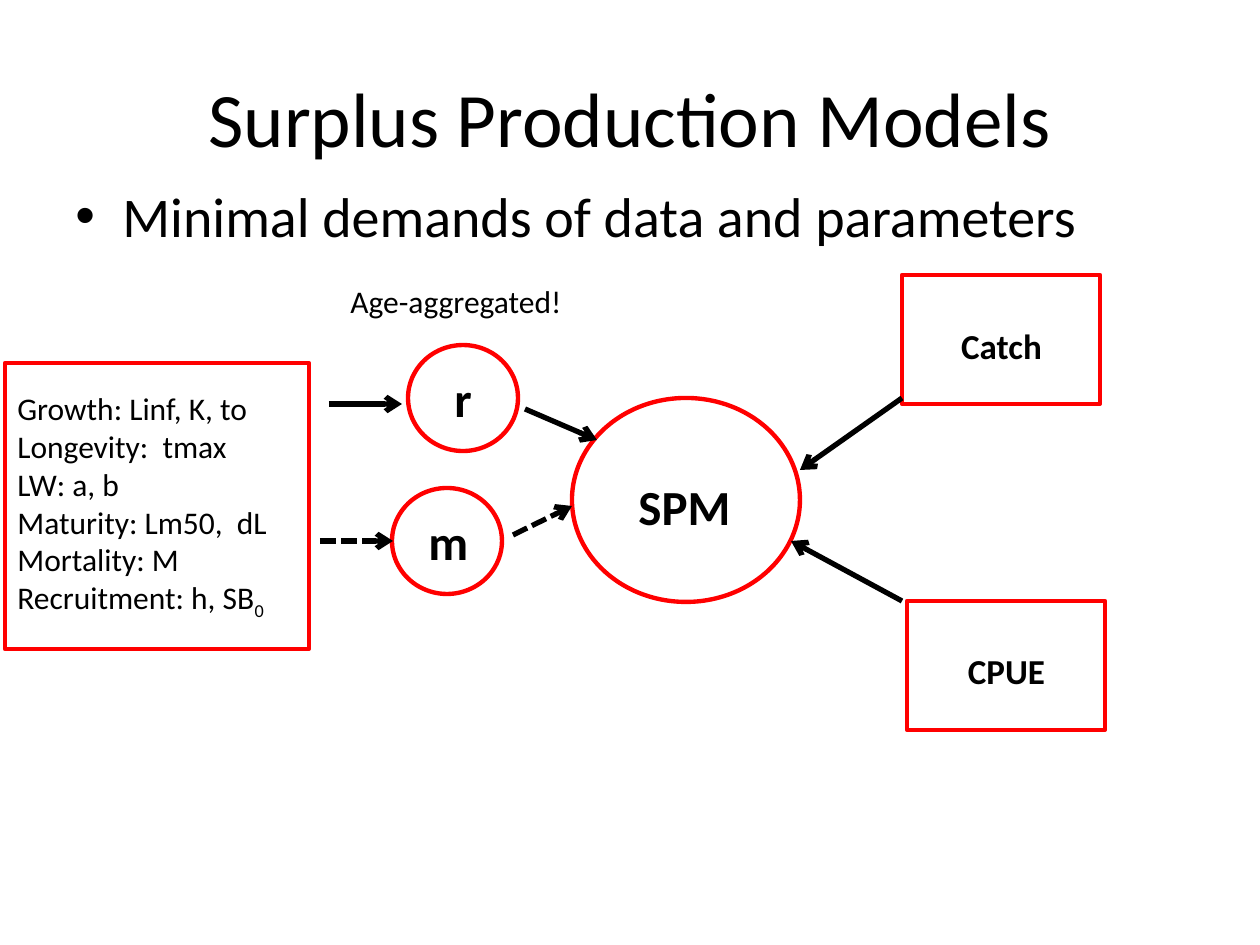
from pptx import Presentation
from pptx.dml.color import RGBColor
from pptx.enum.dml import MSO_LINE
from pptx.enum.shapes import MSO_CONNECTOR, MSO_SHAPE
from pptx.enum.text import MSO_ANCHOR, MSO_AUTO_SIZE, PP_ALIGN
from pptx.oxml.ns import qn
from pptx.util import Pt
from lxml.etree import SubElement

PX = 914400 / 126
BLACK = RGBColor(0, 0, 0)
RED = RGBColor(255, 0, 0)
FONT = "Calibri"
LEFT, CENTER = PP_ALIGN.LEFT, PP_ALIGN.CENTER
RECT, OVAL = MSO_SHAPE.RECTANGLE, MSO_SHAPE.OVAL

TITLE = "Surplus Production Models"
BULLET = "Minimal demands of data and parameters"
NOTE = "Age-aggregated!"
PARAMETERS = [
    "Growth: Linf, K, to",
    "Longevity:  tmax",
    "LW: a, b",
    "Maturity: Lm50,  dL",
    "Mortality: M",
    "Recruitment: h, SB",
]
SUBSCRIPT = "0"

OUTLINES = [
    (RECT, (902, 275, 198, 129)),
    (RECT, (907, 601, 198, 129)),
    (RECT, (5, 363, 304, 286)),
    (OVAL, (408, 345, 110, 106)),
    (OVAL, (572, 398, 228, 204)),
    (OVAL, (392, 488, 110, 106)),
]
LABELS = [
    ("r", (442, 362, 43, 72), 28, LEFT),
    ("SPM", (626, 470, 118, 72), 28, LEFT),
    ("m", (416, 505, 65, 72), 28, LEFT),
    ("Catch", (948, 318, 107, 55), 20, CENTER),
    ("CPUE", (955, 643, 103, 55), 20, CENTER),
]
ARROWS = [
    ((329, 404), (402, 404), False),
    ((525, 409), (597, 440), False),
    ((902, 601), (791, 541), False),
    ((902, 398), (800, 470), False),
    ((320, 541), (393, 541), True),
    ((513, 535), (572, 506), True),
]


def emu(*lengths):
    return [round(length * PX) for length in lengths]


def format_text(paragraph, size, bold=False):
    for run in paragraph.runs:
        run.font.name = FONT
        run.font.size = Pt(size)
        run.font.bold = bold
        run.font.color.rgb = BLACK


def add_text(slide, text, box, size, align=LEFT, bold=False, wrap=True,
             anchor=MSO_ANCHOR.TOP, grow=True):
    frame = slide.shapes.add_textbox(*emu(*box)).text_frame
    frame.word_wrap = wrap
    frame.auto_size = MSO_AUTO_SIZE.SHAPE_TO_FIT_TEXT if grow else MSO_AUTO_SIZE.NONE
    frame.vertical_anchor = anchor
    frame.text = text
    for paragraph in frame.paragraphs:
        paragraph.alignment = align
        format_text(paragraph, size, bold)
    return frame


def add_bullet(paragraph, indent):
    paragraph.space_before = Pt(6.4)
    properties = paragraph._p.get_or_add_pPr()
    properties.set("marL", str(indent))
    properties.set("indent", str(-indent))
    SubElement(properties, qn("a:buFont"), typeface="Arial")
    SubElement(properties, qn("a:buChar"), char="•")


def add_outline(slide, kind, box):
    outline = slide.shapes.add_shape(kind, *emu(*box))
    outline.shadow.inherit = False
    outline.fill.background()
    outline.line.color.rgb = RED
    outline.line.width = Pt(2.5)


def add_arrow(slide, start, end, dashed):
    arrow = slide.shapes.add_connector(MSO_CONNECTOR.STRAIGHT, *emu(*start, *end))
    arrow.line.color.rgb = BLACK
    arrow.line.width = Pt(3)
    if dashed:
        arrow.line.dash_style = MSO_LINE.SQUARE_DOT
    SubElement(arrow.line._get_or_add_ln(), qn("a:tailEnd"), type="arrow")
    SubElement(arrow._element.spPr, qn("a:effectLst"))


def main():
    """Build the slide on surplus production models."""
    deck = Presentation()
    deck.slide_width, deck.slide_height = emu(1260, 945)
    slide = deck.slides.add_slide(deck.slide_layouts[6])

    add_text(slide, TITLE, (63, 38, 1134, 158), 44, CENTER,
             anchor=MSO_ANCHOR.MIDDLE, grow=False)
    body = add_text(slide, BULLET, (63, 175, 1134, 669), 32, grow=False)
    add_bullet(body.paragraphs[0], emu(47)[0])

    for kind, box in OUTLINES:
        add_outline(slide, kind, box)
    for text, box, size, align in LABELS:
        add_text(slide, text, box, size, align, bold=True, wrap=False)

    growth = add_text(slide, "\n".join(PARAMETERS), (5, 383, 304, 242), 18)
    recruitment = growth.paragraphs[-1]
    subscript = recruitment.add_run()
    subscript.text = SUBSCRIPT
    format_text(recruitment, 18)
    subscript.font._element.set("baseline", "-25000")

    add_text(slide, NOTE, (338, 276, 260, 50), 18)
    for start, end, dashed in ARROWS:
        add_arrow(slide, start, end, dashed)

    deck.save("out.pptx")


if __name__ == "__main__":
    main()
